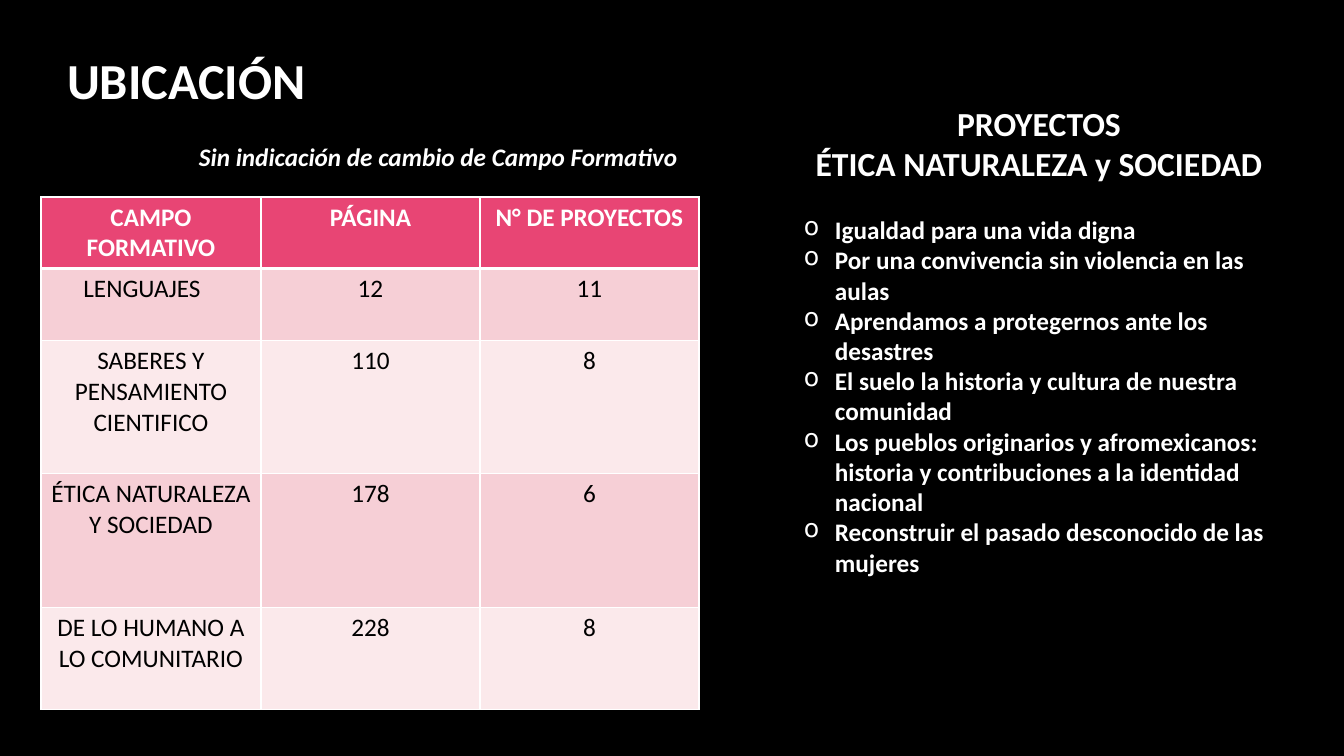
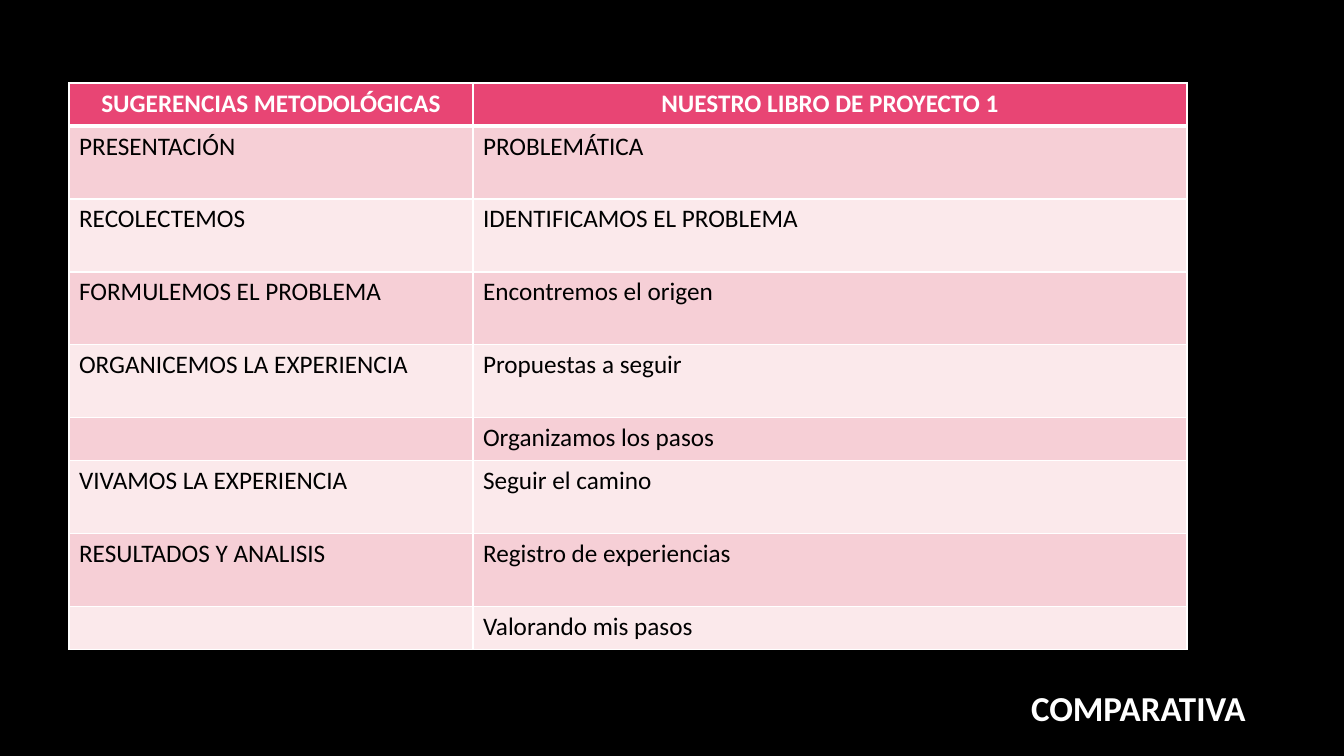
from lxml import etree
from pptx import Presentation
from pptx.dml.color import RGBColor
from pptx.enum.text import MSO_ANCHOR, MSO_AUTO_SIZE, PP_ALIGN
from pptx.oxml.ns import qn
from pptx.util import Pt

SLIDE_WIDTH, SLIDE_HEIGHT = 1344, 756
EMU_PER_PX = 12192000 / SLIDE_WIDTH
TITLE_ONLY = 5

BLACK = RGBColor(0x00, 0x00, 0x00)
WHITE = RGBColor(0xFF, 0xFF, 0xFF)
PINK = RGBColor(0xE8, 0x45, 0x74)
BAND_DARK = RGBColor(0xF6, 0xCF, 0xD6)
BAND_LIGHT = RGBColor(0xFB, 0xE9, 0xEB)

FONT = "Calibri"
BODY_SIZE = 18
LEFT, CENTER = PP_ALIGN.LEFT, PP_ALIGN.CENTER
MIDDLE = MSO_ANCHOR.MIDDLE
NO_AUTOFIT = MSO_AUTO_SIZE.NONE

FIELD_ROWS = [
    ("CAMPO FORMATIVO", "PÁGINA", "N° DE PROYECTOS"),
    ("LENGUAJES", "12", "11"),
    ("SABERES Y PENSAMIENTO CIENTIFICO", "110", "8"),
    ("ÉTICA NATURALEZA Y SOCIEDAD", "178", "6"),
    ("DE LO HUMANO A LO COMUNITARIO", "228", "8"),
]
PROJECT_HEADING = ["PROYECTOS", "ÉTICA NATURALEZA y SOCIEDAD"]
PROJECTS = [
    "Igualdad para una vida digna",
    "Por una convivencia sin violencia en las aulas",
    "Aprendamos a protegernos ante los desastres",
    "El suelo la historia y cultura de nuestra comunidad",
    "Los pueblos originarios y afromexicanos: historia y contribuciones a la identidad nacional",
    "Reconstruir el pasado desconocido de las mujeres",
]
COMPARISON_ROWS = [
    ("SUGERENCIAS METODOLÓGICAS", "NUESTRO LIBRO DE PROYECTO 1"),
    ("PRESENTACIÓN", "PROBLEMÁTICA"),
    ("RECOLECTEMOS", "IDENTIFICAMOS EL PROBLEMA"),
    ("FORMULEMOS EL PROBLEMA", "Encontremos el origen"),
    ("ORGANICEMOS LA EXPERIENCIA", "Propuestas a seguir"),
    ("", "Organizamos los pasos"),
    ("VIVAMOS LA EXPERIENCIA", "Seguir el camino"),
    ("RESULTADOS Y ANALISIS", "Registro de experiencias"),
    ("", "Valorando mis pasos"),
]


def px(length):
    return round(length * EMU_PER_PX)


def write(para, text, size=BODY_SIZE, color=WHITE, bold=True, italic=False,
          align=LEFT, before=0, bullet=False):
    if bullet:
        properties = para._p.get_or_add_pPr()
        properties.set("marL", str(px(31)))
        properties.set("indent", str(-px(31)))
        etree.SubElement(properties, qn("a:buChar")).set("char", "o")
    para.alignment = align
    para.space_before = Pt(before)
    span = para.add_run()
    span.text = text
    font = span.font
    font.name, font.size = FONT, Pt(size)
    font.bold, font.italic = bold, italic
    font.color.rgb = color


def add_title_page(deck, text, box, size):
    page = deck.slides.add_slide(deck.slide_layouts[TITLE_ONLY])
    title = page.shapes.title
    title.left, title.top, title.width, title.height = map(px, box)
    frame = title.text_frame
    frame.auto_size = NO_AUTOFIT
    frame.vertical_anchor = MIDDLE
    write(frame.paragraphs[0], text, size=size)
    return page


def add_text_frame(page, box):
    frame = page.shapes.add_textbox(*map(px, box)).text_frame
    frame.word_wrap = True
    return frame


def set_borders(cell, bottom):
    """Draw white cell edges, 1 pt wide except for the given bottom width."""
    properties = cell._tc.get_or_add_tcPr()
    widths = {"a:lnL": 1, "a:lnR": 1, "a:lnT": 1, "a:lnB": bottom}
    for position, (tag, width) in enumerate(widths.items()):
        line = etree.Element(qn(tag), w=str(Pt(width)))
        fill = etree.SubElement(line, qn("a:solidFill"))
        etree.SubElement(fill, qn("a:srgbClr")).set("val", str(WHITE))
        properties.insert(position, line)


def add_banded_table(page, left, top, widths, heights, rows, align):
    table = page.shapes.add_table(
        len(rows), len(widths), px(left), px(top),
        px(sum(widths)), px(sum(heights))).table
    for column, width in zip(table.columns, widths):
        column.width = px(width)
    for index, (row, height, texts) in enumerate(zip(table.rows, heights, rows)):
        row.height = px(height)
        header = index == 0
        band = BAND_DARK if index % 2 else BAND_LIGHT
        for cell, text in zip(row.cells, texts):
            cell.fill.solid()
            cell.fill.fore_color.rgb = PINK if header else band
            set_borders(cell, bottom=3 if header or index == 0 else 1)
            if text:
                write(cell.text_frame.paragraphs[0], text, bold=header,
                      color=WHITE if header else BLACK,
                      align=CENTER if header else align)
    return table


def add_project_list(page, box):
    frame = add_text_frame(page, box)
    lines = [(text, dict(size=24, align=CENTER)) for text in PROJECT_HEADING]
    lines += [(text, dict(bullet=True, before=0 if index else 22))
              for index, text in enumerate(PROJECTS)]
    for index, (text, style) in enumerate(lines):
        para = frame.add_paragraph() if index else frame.paragraphs[0]
        write(para, text, **style)


def add_location_page(deck):
    page = add_title_page(deck, "UBICACIÓN", (57, 42, 314, 75), size=36)
    table = add_banded_table(page, 41, 197, [220, 219, 219],
                             [71, 72, 133, 134, 102], FIELD_ROWS, CENTER)
    table.cell(1, 0).margin_right = px(28)
    note = add_text_frame(page, (189, 136, 513, 40))
    write(note.paragraphs[0], "Sin indicación de cambio de Campo Formativo",
          italic=True)
    add_project_list(page, (794, 98, 490, 519))


def add_comparison_page(deck):
    page = add_title_page(deck, "COMPARATIVA", (1021, 692, 247, 32), size=25)
    short, tall = 43, 73
    heights = [short if index == 0 or not row[0] else tall
               for index, row in enumerate(COMPARISON_ROWS)]
    add_banded_table(page, 69, 83, [404, 714], heights, COMPARISON_ROWS, LEFT)


def main():
    deck = Presentation()
    deck.slide_width, deck.slide_height = px(SLIDE_WIDTH), px(SLIDE_HEIGHT)
    background = deck.slide_master.background.fill
    background.solid()
    background.fore_color.rgb = BLACK
    add_location_page(deck)
    add_comparison_page(deck)
    deck.save("out.pptx")


if __name__ == "__main__":
    main()
